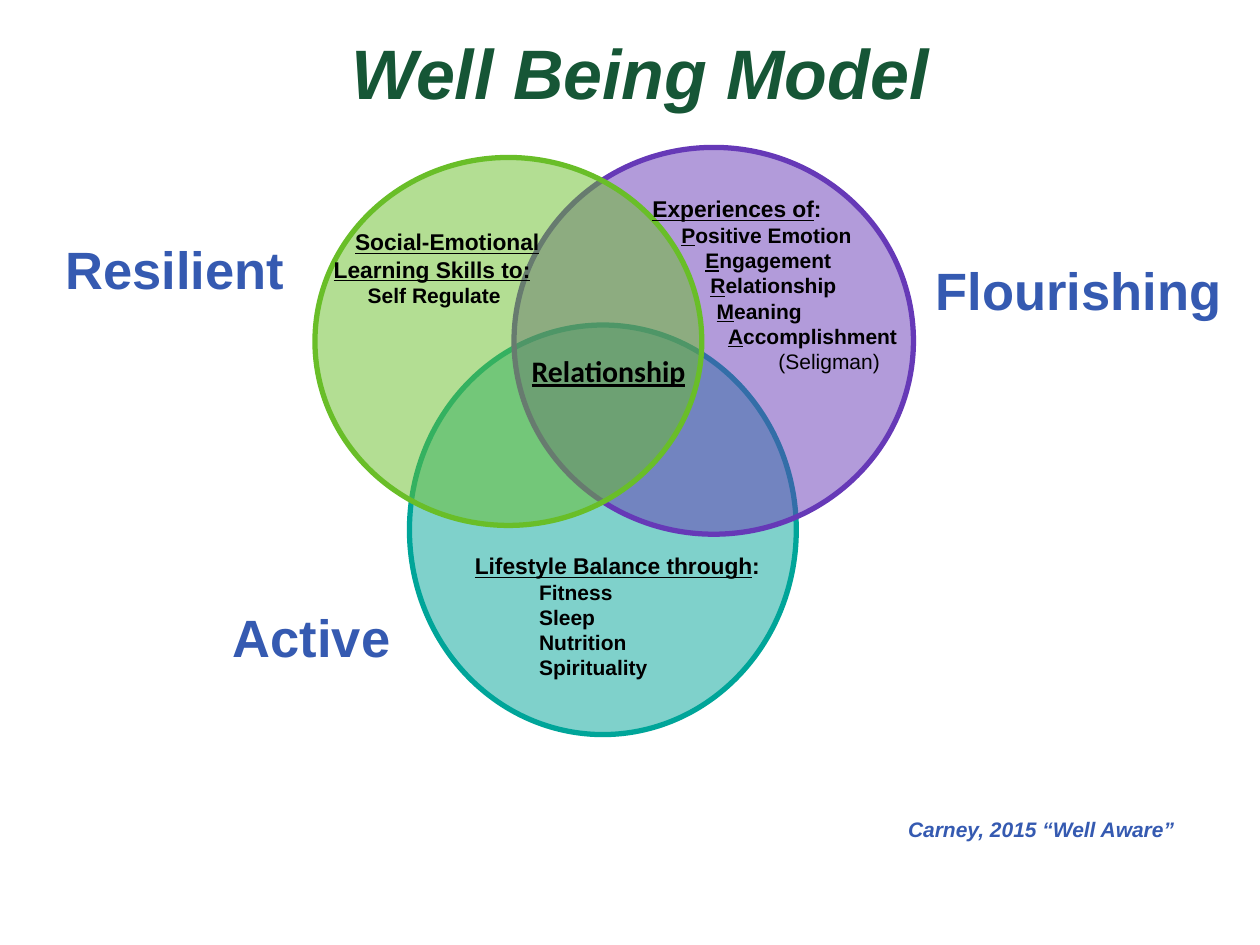
from lxml.etree import SubElement
from pptx import Presentation
from pptx.dml.color import RGBColor
from pptx.enum.shapes import MSO_SHAPE
from pptx.enum.text import MSO_ANCHOR, MSO_AUTO_SIZE, PP_ALIGN
from pptx.oxml.ns import qn
from pptx.util import Inches, Pt

BLACK, BLUE, GREEN = "000000", "355AB1", "165636"
BOLD, UNDERLINED, PLAIN = {"bold": True}, {"bold": True, "underline": True}, {"bold": False}

TITLE = ("Well Being Model", (1.08, 0.17, 8, 0.8))
CIRCLES = [
    ("00A599", (3.25, 2.58, 3.07, 3.25)),
    ("6639B7", (4.08, 1.17, 3.17, 3.07)),
    ("69BE28", (2.5, 1.25, 3.07, 2.92)),
]
PERMA = [(0.23, "Positive Emotion"), (0.42, "Engagement"), (0.46, "Relationship"),
         (0.51, "Meaning"), (0.6, "Accomplishment")]
BALANCE = ["Fitness", "Sleep", "Nutrition", "Spirituality"]

# fmt: off
LISTS = [
    ((2.5, 1.76, 2.08, 0.75), [
        (0.22, 13, [("Social-Emotional", UNDERLINED)]),
        (0.05, 13, [("Learning Skills to:", UNDERLINED)]),
        (0.32, 12, [("Self Regulate", BOLD)]),
    ]),
    ((5.08, 1.5, 2.33, 1.55), [
        (0, 13, [("Experiences of", UNDERLINED), (":", BOLD)]),
        *[(indent, 12, [(word[0], UNDERLINED), (word[1:], BOLD)]) for indent, word in PERMA],
        (1, 12, [("(Seligman)", PLAIN)]),
    ]),
    ((3.67, 4.33, 2.92, 1.35), [
        (0, 13, [("Lifestyle Balance through", UNDERLINED), (":", BOLD)]),
        *[(0.51, 12, [(word, BOLD)]) for word in BALANCE],
    ]),
]
LABELS = [
    ("Relationship", (4.08, 2.75, 1.5, 0.39), PP_ALIGN.CENTER,
     {"name": "Calibri", "size": 17, "color": BLACK, "underline": True}),
    ("Resilient", (0.42, 1.83, 2.37, 0.61), PP_ALIGN.LEFT, {"size": 30, "color": BLUE}),
    ("Flourishing", (7.33, 2, 2.67, 0.61), PP_ALIGN.LEFT, {"size": 30, "color": BLUE}),
    ("Active", (1.75, 4.75, 1.71, 0.61), PP_ALIGN.LEFT, {"size": 30, "color": BLUE}),
    ("Carney, 2015 “Well Aware”", (6.5, 6.43, 2.92, 0.29), PP_ALIGN.RIGHT,
     {"size": 12, "color": BLUE, "italic": True}),
]


def paint(color_format, value):
    color_format.rgb = RGBColor.from_string(value)


def add_span(para, text, style):
    span = para.add_run()
    span.text = text
    values = {"name": "Arial", "bold": True, **style}
    paint(span.font.color, values.pop("color"))
    values["size"] = Pt(values["size"])
    for key, value in values.items():
        setattr(span.font, key, value)


def add_box(page, place):
    box = page.shapes.add_textbox(*map(Inches, place))
    box.text_frame.word_wrap = True
    return box.text_frame


def add_circle(page, color, place):
    circle = page.shapes.add_shape(MSO_SHAPE.OVAL, *map(Inches, place))
    circle.shadow.inherit = False
    circle.fill.solid()
    paint(circle.fill.fore_color, color)
    fill_color = circle.fill._xPr.find(qn("a:solidFill"))[0]
    SubElement(fill_color, qn("a:alpha"), val="50000")
    paint(circle.line.color, color)
    circle.line.width = Pt(3)


def add_list(page, place, lines):
    frame = add_box(page, place)
    for number, (indent, size, spans) in enumerate(lines):
        para = frame.add_paragraph() if number else frame.paragraphs[0]
        properties = para._p.get_or_add_pPr()
        properties.set("marL", str(Inches(indent)))
        properties.set("indent", "0")
        for text, style in spans:
            add_span(para, text, {"size": size, "color": BLACK, **style})


def add_label(page, text, place, alignment, style):
    para = add_box(page, place).paragraphs[0]
    para.alignment = alignment
    add_span(para, text, style)


def fill_title(page, text, place):
    title = page.shapes.title
    title.left, title.top, title.width, title.height = map(Inches, place)
    frame = title.text_frame
    settings = {"word_wrap": False, "auto_size": MSO_AUTO_SIZE.NONE,
                "vertical_anchor": MSO_ANCHOR.MIDDLE}
    for key, value in settings.items():
        setattr(frame, key, value)
    para = frame.paragraphs[0]
    para.alignment = PP_ALIGN.CENTER
    add_span(para, text, {"size": 40, "color": GREEN, "italic": True})


def main():
    deck = Presentation()
    deck.slide_width, deck.slide_height = Inches(10), Inches(7.5)
    page = deck.slides.add_slide(deck.slide_layouts[5])
    fill_title(page, *TITLE)
    for circle in CIRCLES:
        add_circle(page, *circle)
    for place, lines in LISTS:
        add_list(page, place, lines)
    for label in LABELS:
        add_label(page, *label)
    deck.save("out.pptx")


if __name__ == "__main__":
    main()
